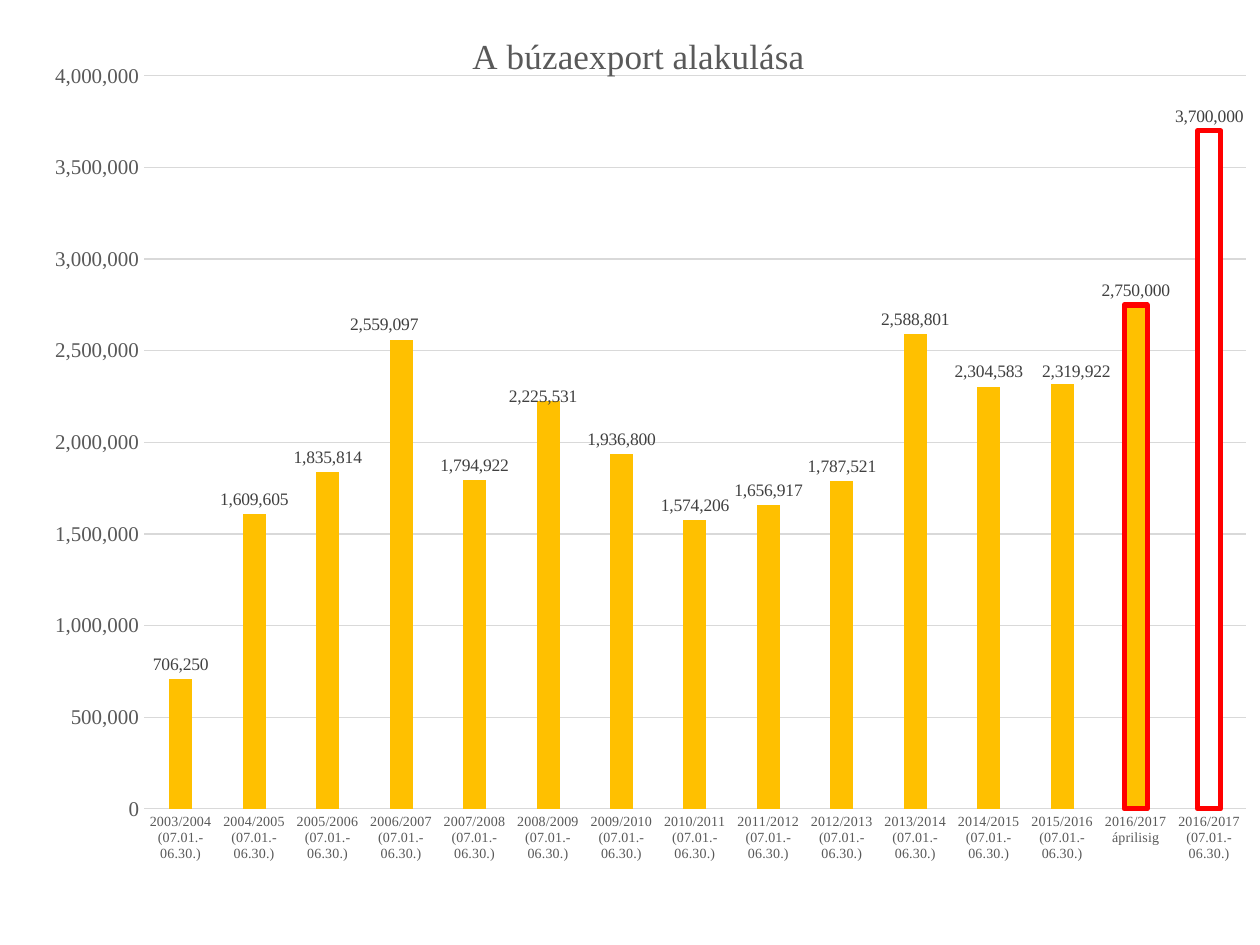
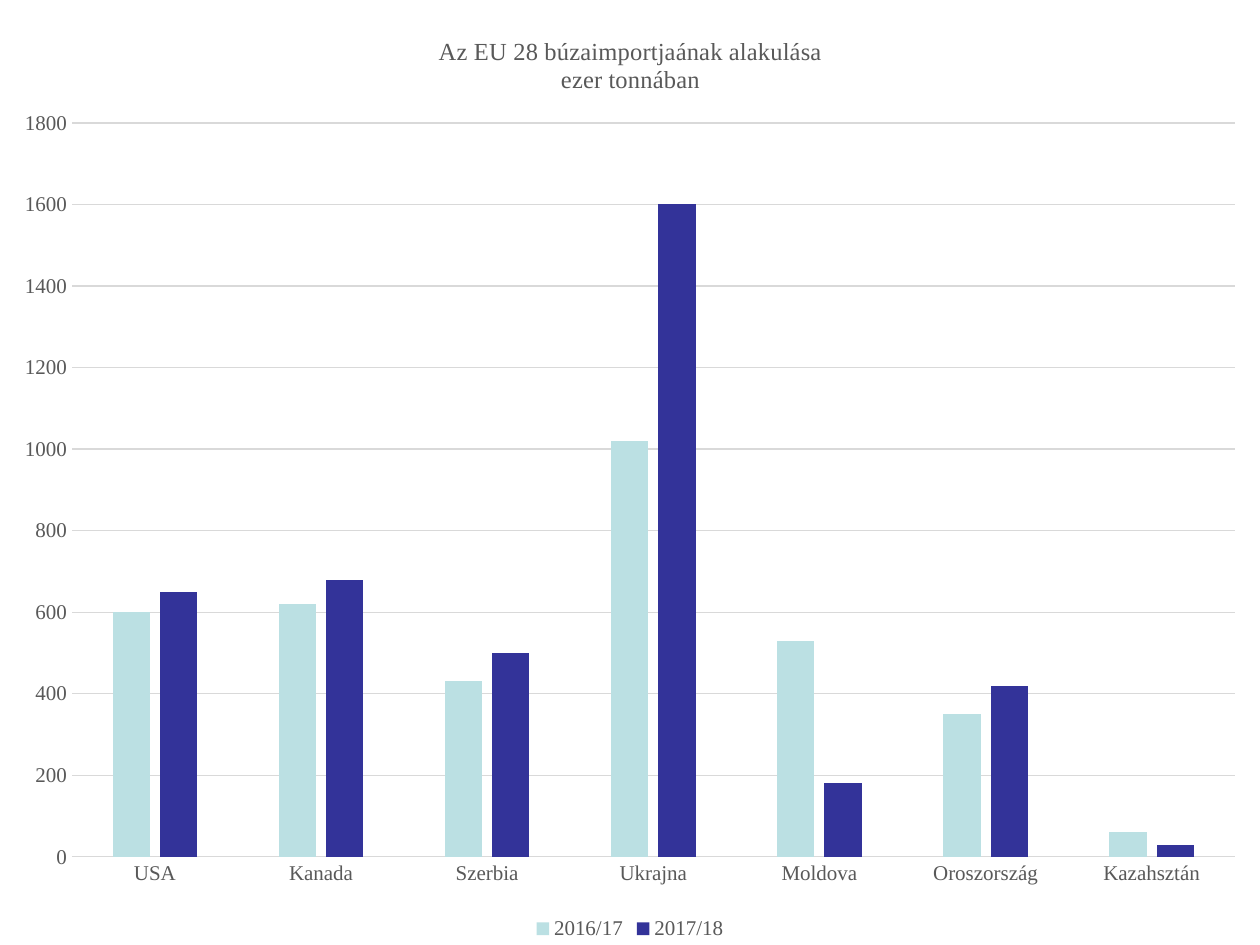
"""Build two slides of column charts on wheat exports and imports."""

from dataclasses import dataclass, field

from pptx import Presentation
from pptx.chart.chart import Chart
from pptx.chart.data import CategoryChartData
from pptx.dml.color import RGBColor
from pptx.enum.chart import XL_CHART_TYPE, XL_LABEL_POSITION, XL_LEGEND_POSITION, XL_TICK_MARK
from pptx.oxml import parse_xml
from pptx.oxml.ns import nsdecls
from pptx.presentation import Presentation as Deck
from pptx.text.text import Font
from pptx.util import Pt

EMU_PER_PX = 914400 / 126
SLIDE_WIDTH, SLIDE_HEIGHT = 1260, 945
TYPEFACE = "Times New Roman"
GREY, LABEL_GREY, GRID_GREY = "595959", "404040", "D9D9D9"
AMBER, WHITE, RED = "FFC000", "FFFFFF", "FF0000"
PALE_TEAL, INDIGO = "BBE0E3", "333399"
THOUSANDS = "#,##0"


@dataclass(frozen=True)
class Season:
    name: str
    tonnes: tuple[int, ...]
    color: str


@dataclass(frozen=True)
class ColumnChart:
    title: str
    title_size: int
    title_corner: tuple[int, int]
    plot_box: tuple[int, int, int, int]
    categories: list[str]
    seasons: list[Season]
    axis_top: int
    axis_step: int
    category_size: int = 12
    number_format: str = "General"
    has_legend: bool = False
    label_shifts: dict[int, tuple[int, int]] = field(default_factory=dict)
    outlined: dict[int, str] = field(default_factory=dict)


def px(length: int) -> int:
    return round(length * EMU_PER_PX)


def rgb(code: str) -> RGBColor:
    return RGBColor.from_string(code)


def style_font(font: Font, size: int, color: str = GREY) -> None:
    font.name = TYPEFACE
    font.size = Pt(size)
    font.bold = False
    font.color.rgb = rgb(color)


def place(parent, index: int, left: int, top: int,
          size: tuple[int, ...] = (), edge: bool = True) -> None:
    """Give a chart part a manual layout measured in px."""
    for old in parent.xpath("./c:layout"):
        parent.remove(old)
    modes = '<c:xMode val="edge"/><c:yMode val="edge"/>' if edge else ""
    target = '<c:layoutTarget val="inner"/>' if size else ""
    lengths = zip("xywh", (left, top, *size), (SLIDE_WIDTH, SLIDE_HEIGHT) * 2)
    values = "".join(f'<c:{tag} val="{length / whole:.4f}"/>' for tag, length, whole in lengths)
    parent.insert(index, parse_xml(
        f'<c:layout {nsdecls("c")}><c:manualLayout>{target}{modes}{values}'
        "</c:manualLayout></c:layout>"))


def add_title(chart: Chart, content: ColumnChart) -> None:
    chart.has_title = True
    frame = chart.chart_title.text_frame
    frame.text = content.title
    for paragraph in frame.paragraphs:
        style_font(paragraph.font, content.title_size)
        for run in paragraph.runs:
            style_font(run.font, content.title_size)
    place(chart.element.xpath("./c:chart/c:title")[0], 1, *content.title_corner)


def style_axes(chart: Chart, content: ColumnChart) -> None:
    countries, amounts = chart.category_axis, chart.value_axis
    for axis, size in ((countries, content.category_size), (amounts, 12)):
        axis.major_tick_mark = axis.minor_tick_mark = XL_TICK_MARK.NONE
        style_font(axis.tick_labels.font, size)
    amounts.minimum_scale, amounts.maximum_scale = 0, content.axis_top
    amounts.major_unit = content.axis_step
    amounts.tick_labels.number_format = content.number_format
    amounts.tick_labels.number_format_is_linked = False
    amounts.format.line.fill.background()
    for line in (countries.format.line, amounts.major_gridlines.format.line):
        line.color.rgb = rgb(GRID_GREY)
        line.width = Pt(0.75)


def label_values(chart: Chart, content: ColumnChart) -> None:
    bars = chart.plots[0].series[0]
    labels = bars.data_labels
    labels.show_value = True
    labels.number_format, labels.number_format_is_linked = THOUSANDS, False
    labels.position = XL_LABEL_POSITION.OUTSIDE_END
    style_font(labels.font, 10, LABEL_GREY)
    for index, shift in content.label_shifts.items():
        label = bars.points[index].data_label
        style_font(label.font, 10, LABEL_GREY)
        label.position = XL_LABEL_POSITION.OUTSIDE_END
        moved = chart.element.xpath(f".//c:dLbl[c:idx/@val='{index}']")[0]
        place(moved, 1, *shift, edge=False)


def style_bars(chart: Chart, content: ColumnChart) -> None:
    plot = chart.plots[0]
    plot.gap_width, plot.overlap, plot.vary_by_categories = 219, -27, False
    for bars, season in zip(plot.series, content.seasons):
        bars.invert_if_negative = False
        bars.format.fill.solid()
        bars.format.fill.fore_color.rgb = rgb(season.color)
    for index, color in content.outlined.items():
        bar = plot.series[0].points[index].format
        bar.fill.solid()
        bar.fill.fore_color.rgb = rgb(color)
        bar.line.color.rgb = rgb(RED)
        bar.line.width = Pt(3)


def add_legend(chart: Chart) -> None:
    chart.has_legend = True
    chart.legend.position = XL_LEGEND_POSITION.BOTTOM
    chart.legend.include_in_layout = False
    style_font(chart.legend.font, 12)


def add_chart_slide(deck: Deck, content: ColumnChart) -> None:
    slide = deck.slides.add_slide(deck.slide_layouts[6])
    table = CategoryChartData(number_format=content.number_format)
    table.categories = content.categories
    for season in content.seasons:
        table.add_series(season.name, season.tonnes)
    chart = slide.shapes.add_chart(
        XL_CHART_TYPE.COLUMN_CLUSTERED, 0, 0, px(SLIDE_WIDTH), px(SLIDE_HEIGHT), table).chart
    style_font(chart.font, 12, "000000")
    add_title(chart, content)
    style_axes(chart, content)
    style_bars(chart, content)
    left, top, *size = content.plot_box
    place(chart.element.xpath("./c:chart/c:plotArea")[0], 0, left, top, tuple(size))
    chart.has_legend = False
    if content.has_legend:
        add_legend(chart)
    if content.label_shifts:
        label_values(chart, content)


FULL_YEAR = "(07.01.-06.30.)"
EXPORT = ColumnChart(
    title="A búzaexport alakulása", title_size=20, title_corner=(466, 28),
    plot_box=(144, 76, 1102, 733),
    categories=[f"{year}/{year + 1} {FULL_YEAR}" for year in range(2003, 2016)]
    + ["2016/2017 áprilisig", f"2016/2017 {FULL_YEAR}"],
    seasons=[Season("Búzaexport", (
        706250, 1609605, 1835814, 2559097, 1794922, 2225531, 1936800, 1574206,
        1656917, 1787521, 2588801, 2304583, 2319922, 2750000, 3700000), AMBER)],
    axis_top=4000000, axis_step=500000, category_size=8, number_format=THOUSANDS,
    label_shifts={3: (-17, -1), 5: (-5, 10), 12: (14, 3)},
    outlined={13: AMBER, 14: WHITE},
)
IMPORT = ColumnChart(
    title="Az EU 28 búzaimportjaának alakulása\nezer tonnában", title_size=14,
    title_corner=(435, 32), plot_box=(72, 123, 1163, 734),
    categories=["USA", "Kanada", "Szerbia", "Ukrajna", "Moldova", "Oroszország", "Kazahsztán"],
    seasons=[
        Season("2016/17", (600, 620, 430, 1020, 530, 350, 60), PALE_TEAL),
        Season("2017/18", (650, 680, 500, 1600, 180, 420, 30), INDIGO),
    ],
    axis_top=1800, axis_step=200, has_legend=True,
)


def main() -> None:
    deck = Presentation()
    deck.slide_width, deck.slide_height = px(SLIDE_WIDTH), px(SLIDE_HEIGHT)
    for content in (EXPORT, IMPORT):
        add_chart_slide(deck, content)
    deck.save("out.pptx")


if __name__ == "__main__":
    main()
